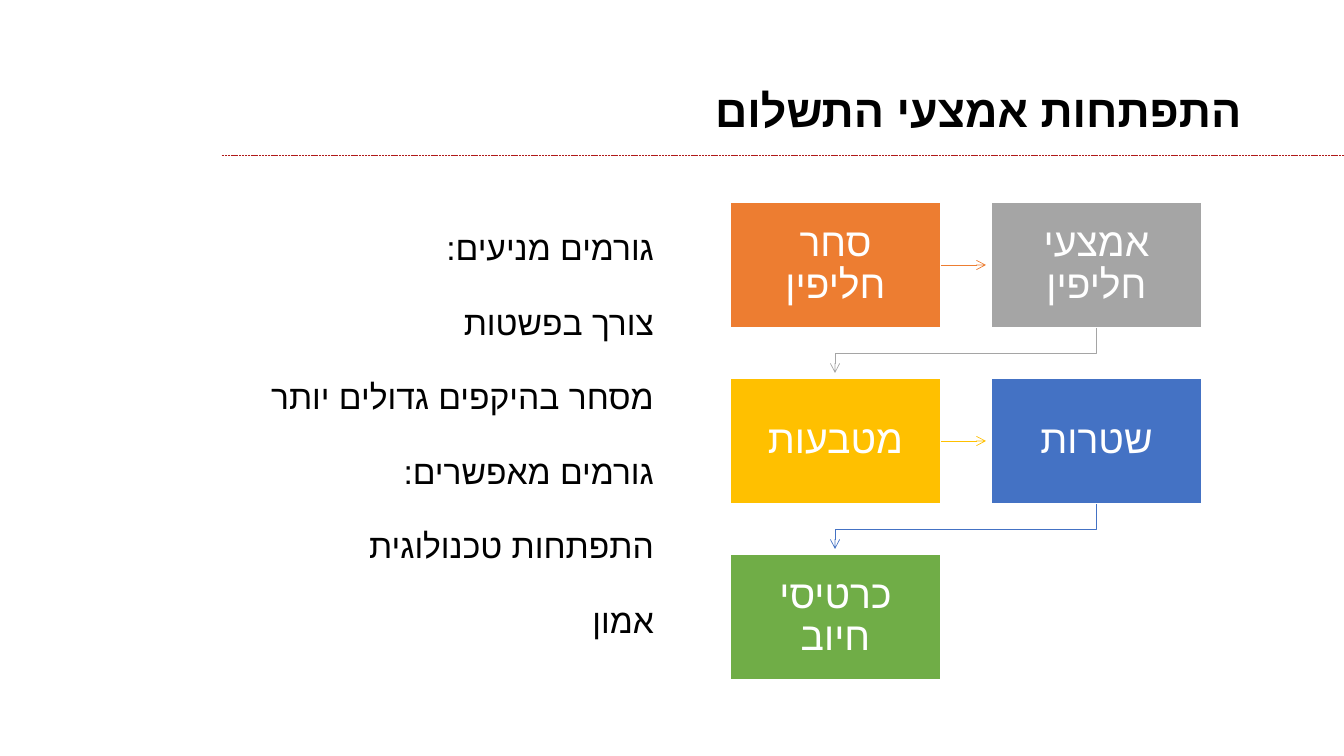
from dataclasses import dataclass

import pptx
import pptx.dml.color
import pptx.enum.dml
import pptx.enum.shapes
import pptx.enum.text
import pptx.oxml.ns
import pptx.util
from lxml import etree

EMU_PER_PX = 914400 / 100.8
SLIDE_W, SLIDE_H = 1344, 756
FONT = "Arial"
COLORS = {
    "text": "000000", "white": "FFFFFF", "rule": "B01A1A",
    "orange": "ED7D31", "gray": "A5A5A5", "gold": "FFC000",
    "blue": "4472C4", "green": "70AD47",
}
GRID_LEFT, GRID_TOP = 730, 202
BOX_W, BOX_H = 211, 126
GAP = 50
ARROW_GAP = 5
COLUMNS = 2

ALIGN = pptx.enum.text.PP_ALIGN
ANCHOR = pptx.enum.text.MSO_ANCHOR


@dataclass(frozen=True)
class Stage:
    label: str
    color: str


STAGES = [
    Stage("סחר חליפין", "orange"),
    Stage("אמצעי חליפין", "gray"),
    Stage("מטבעות", "gold"),
    Stage("שטרות", "blue"),
    Stage("כרטיסי חיוב", "green"),
]
FACTORS = [
    "גורמים מניעים:",
    "צורך בפשטות",
    "מסחר בהיקפים גדולים יותר",
    "גורמים מאפשרים:",
    "התפתחות טכנולוגית",
    "אמון",
]


def px(n: int) -> int:
    return round(n * EMU_PER_PX)


def rgb(name: str) -> pptx.dml.color.RGBColor:
    return pptx.dml.color.RGBColor.from_string(COLORS[name])


def sub(parent, tag: str, **attrs: str):
    return etree.SubElement(parent, pptx.oxml.ns.qn(tag), **attrs)


def add_paragraph(tf, text: str, size: int, color: str, align, spacing: float,
                  first: bool = True, bold: bool = False):
    """Write one right-to-left paragraph."""
    p = tf.paragraphs[0] if first else tf.add_paragraph()
    p.alignment = align
    p.line_spacing = spacing
    p._p.get_or_add_pPr().set("rtl", "1")
    r = p.add_run()
    r.text = text
    r.font.name = FONT
    r.font.size = pptx.util.Pt(size)
    r.font.bold = bold
    r.font.color.rgb = rgb(color)
    sub(r._r.get_or_add_rPr(), "a:cs", typeface=FONT)
    return p


def add_text_box(s, left: int, top: int, width: int, height: int, anchor):
    tf = s.shapes.add_textbox(px(left), px(top), px(width), px(height)).text_frame
    tf.word_wrap = True
    tf.vertical_anchor = anchor
    return tf


def style_line(sp, color: str, arrow: bool = True) -> None:
    sp.line.color.rgb = rgb(color)
    sp.line.width = pptx.util.Pt(0.5)
    if arrow:
        sub(sp.line._get_or_add_ln(), "a:tailEnd", type="arrow")


def add_line(s, x1: int, y1: int, x2: int, y2: int):
    sp = s.shapes.add_connector(
        pptx.enum.shapes.MSO_CONNECTOR.STRAIGHT, px(x1), px(y1), px(x2), px(y2))
    sub(sp._element.spPr, "a:effectLst")
    return sp


def stage_origin(i: int) -> tuple[int, int]:
    row, col = divmod(i, COLUMNS)
    return GRID_LEFT + col * (BOX_W + GAP), GRID_TOP + row * (BOX_H + GAP)


def add_stage(s, i: int, stage: Stage):
    left, top = stage_origin(i)
    sp = s.shapes.add_shape(pptx.enum.shapes.MSO_SHAPE.RECTANGLE,
                            px(left), px(top), px(BOX_W), px(BOX_H))
    sp.shadow.inherit = False
    sp.fill.solid()
    sp.fill.fore_color.rgb = rgb(stage.color)
    sp.line.color.rgb = rgb("white")
    sp.line.width = pptx.util.Pt(1)
    tf = sp.text_frame
    tf.word_wrap = True
    tf.vertical_anchor = ANCHOR.MIDDLE
    tf.margin_left = tf.margin_right = tf.margin_top = tf.margin_bottom = px(22)
    add_paragraph(tf, stage.label, 28, "white", ALIGN.CENTER, 0.9)
    return sp


def add_arrow(s, i: int, box, color: str) -> None:
    """Lead from stage i to the next: across a row, or down to a new row."""
    left, top = stage_origin(i)
    next_left, next_top = stage_origin(i + 1)
    if top == next_top:
        y = top + BOX_H // 2
        sp = add_line(s, left + BOX_W, y, next_left - ARROW_GAP, y)
        sp.begin_connect(box, 3)
    else:
        x1, x2 = left + BOX_W // 2, next_left + BOX_W // 2
        bottom = top + BOX_H
        bend = bottom + GAP // 2
        builder = s.shapes.build_freeform(x1, bottom, scale=EMU_PER_PX)
        builder.add_line_segments(
            [(x1, bend), (x2, bend), (x2, next_top - ARROW_GAP)], close=False)
        sp = builder.convert_to_shape()
        sp.shadow.inherit = False
        sp.fill.background()
    style_line(sp, color)


def main() -> None:
    prs = pptx.Presentation()
    prs.slide_width, prs.slide_height = px(SLIDE_W), px(SLIDE_H)
    s = prs.slides.add_slide(prs.slide_layouts[6])

    rule = add_line(s, 222, 155, SLIDE_W, 155)
    style_line(rule, "rule", arrow=False)
    rule.line.dash_style = pptx.enum.dml.MSO_LINE.SQUARE_DOT

    title = add_text_box(s, 93, 40, 1159, 146, ANCHOR.MIDDLE)
    add_paragraph(title, "התפתחות אמצעי התשלום", 32, "text", ALIGN.RIGHT, 0.9,
                  bold=True)

    boxes = [add_stage(s, i, stage) for i, stage in enumerate(STAGES)]
    for i, stage in enumerate(STAGES[:-1]):
        add_arrow(s, i, boxes[i], stage.color)

    factors = add_text_box(s, 93, 202, 571, 533, ANCHOR.TOP)
    for i, text in enumerate(FACTORS):
        p = add_paragraph(factors, text, 24, "text", ALIGN.RIGHT, 1.5, first=i == 0)
        if i:
            p.space_before = pptx.util.Pt(10)

    prs.save("out.pptx")


if __name__ == "__main__":
    main()
